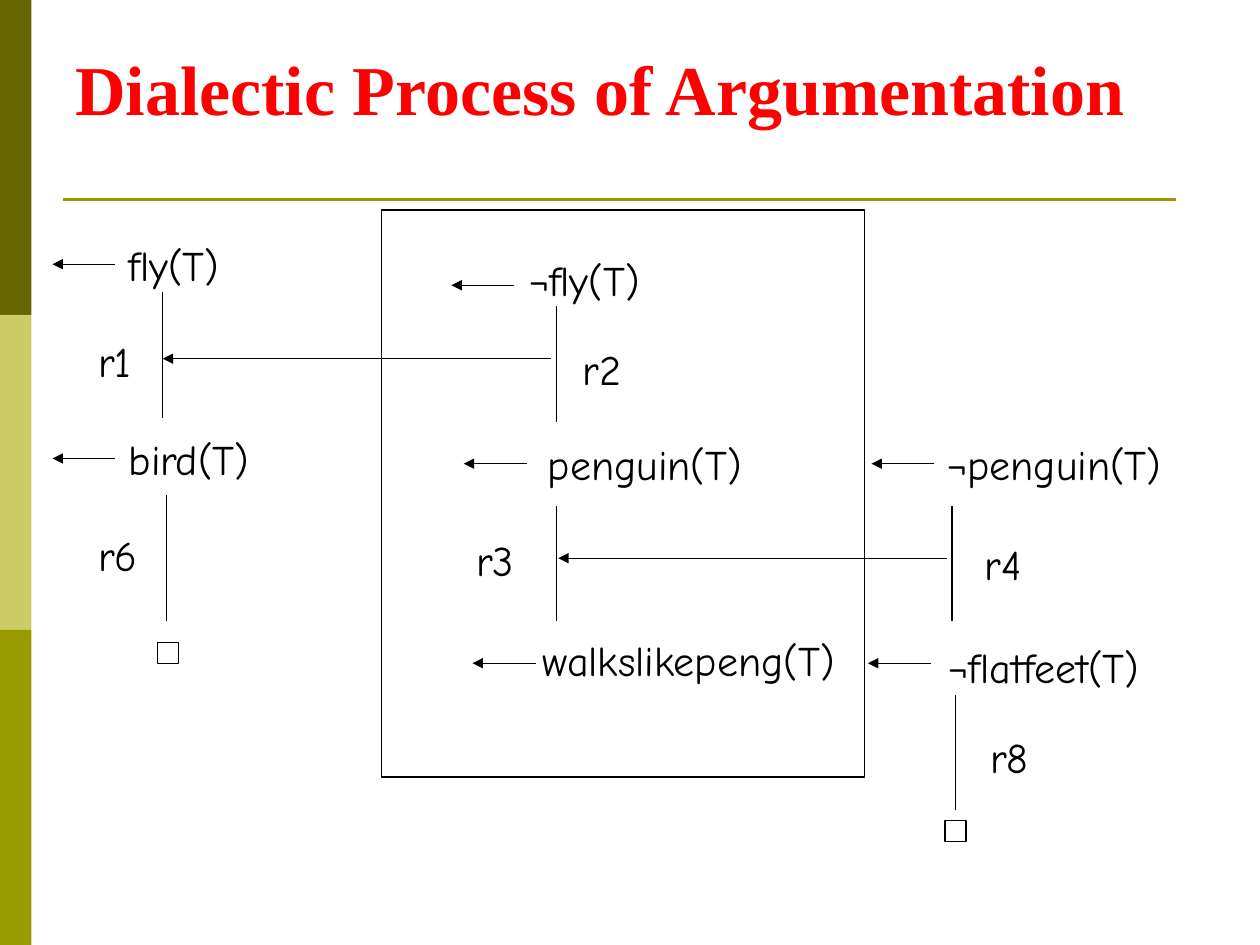
from lxml import etree
from pptx import Presentation
from pptx.dml.color import RGBColor
from pptx.enum.shapes import MSO_CONNECTOR, MSO_SHAPE
from pptx.enum.text import MSO_ANCHOR
from pptx.oxml.ns import qn
from pptx.util import Pt

RECT = MSO_SHAPE.RECTANGLE
STRAIGHT = MSO_CONNECTOR.STRAIGHT
TOP, BOTTOM = MSO_ANCHOR.TOP, MSO_ANCHOR.BOTTOM

TITLE = "Dialectic Process of Argumentation"
BAND_COLORS = ["666600", "CCCC66", "999900"]
BAND_W, BAND_H = 18, 180

# text, left, top, width
LITERALS = [
    ("fly(T)", 66.4, 133.2, 120),
    ("bird(T)", 66.4, 244, 120),
    ("¬fly(T)", 295.2, 142, 120),
    ("penguin(T)", 306, 247, 137),
    ("walkslikepeng(T)", 303, 359.2, 198),
    ("¬penguin(T)", 534.2, 247, 155),
    ("¬flatfeet(T)", 535, 363, 155),
]
# text, left, top
RULES = [
    ("r1", 49, 188), ("r6", 49, 299), ("r2", 326, 193),
    ("r3", 265, 301.7), ("r4", 555.8, 304), ("r8", 558.7, 414.7),
]
LABEL_H, RULE_W = 36, 47

# x, top, bottom
DERIVATIONS = [
    (93, 167, 239), (95, 283, 355), (318, 175, 241),
    (318, 289, 355), (544, 289, 355), (546, 397, 463),
]
# right end, y
GOAL_ARROWS = [
    (66, 151), (66, 262), (294, 163), (301, 265),
    (306, 379), (534, 265), (532, 379),
]
GOAL_LEN = 36
# right end, left end, y
ATTACKS = [(315, 93, 205), (541, 319, 319)]
FRAME = (218, 120, 276, 324)
EMPTY_GOALS = [(90, 367, 12, 12), (540, 469, 12, 12)]


def rgb(value):
    return RGBColor.from_string(value)


def add_rect(s, box, fill=None):
    """Add a filled rectangle, or a black outline when no fill is given."""
    sp = s.shapes.add_shape(RECT, *map(Pt, box))
    sp.shadow.inherit = False
    if fill:
        sp.fill.solid()
        sp.fill.fore_color.rgb = rgb(fill)
        sp.line.fill.background()
    else:
        sp.fill.background()
        sp.line.color.rgb = rgb("000000")
        sp.line.width = Pt(0.75)


def add_line(s, x1, y1, x2, y2, color="000000", width=0.75, arrow=False):
    c = s.shapes.add_connector(STRAIGHT, *map(Pt, (x1, y1, x2, y2)))
    c.line.color.rgb = rgb(color)
    c.line.width = Pt(width)
    if arrow:
        etree.SubElement(c.line._get_or_add_ln(), qn("a:tailEnd"), type="triangle")
    etree.SubElement(c._element.spPr, qn("a:effectLst"))


def add_text(s, text, box, font="Comic Neue", size=24, color="000000",
             bold=False, anchor=TOP):
    tf = s.shapes.add_textbox(*map(Pt, box)).text_frame
    tf.word_wrap = True
    tf.vertical_anchor = anchor
    r = tf.paragraphs[0].add_run()
    r.text = text
    r.font.name = font
    r.font.size = Pt(size)
    r.font.bold = bold
    r.font.color.rgb = rgb(color)


def main():
    prs = Presentation()
    prs.slide_width, prs.slide_height = Pt(720), Pt(540)
    s = prs.slides.add_slide(prs.slide_layouts[6])

    for i, color in enumerate(BAND_COLORS):
        add_rect(s, (0, i * BAND_H, BAND_W, BAND_H), color)
    add_line(s, 36, 114, 672, 114, "999900", 1.5)
    add_text(s, TITLE, (36, 21.6, 648, 56), "Times New Roman", 40, "FF0000",
             bold=True, anchor=BOTTOM)

    for box in [FRAME] + EMPTY_GOALS:
        add_rect(s, box)
    for x, top, bottom in DERIVATIONS:
        add_line(s, x, top, x, bottom)
    for x, y in GOAL_ARROWS:
        add_line(s, x, y, x - GOAL_LEN, y, arrow=True)
    for right, left, y in ATTACKS:
        add_line(s, right, y, left, y, arrow=True)

    for text, x, y, w in LITERALS:
        add_text(s, text, (x, y, w, LABEL_H))
    for text, x, y in RULES:
        add_text(s, text, (x, y, RULE_W, LABEL_H))

    prs.save("out.pptx")


if __name__ == "__main__":
    main()
